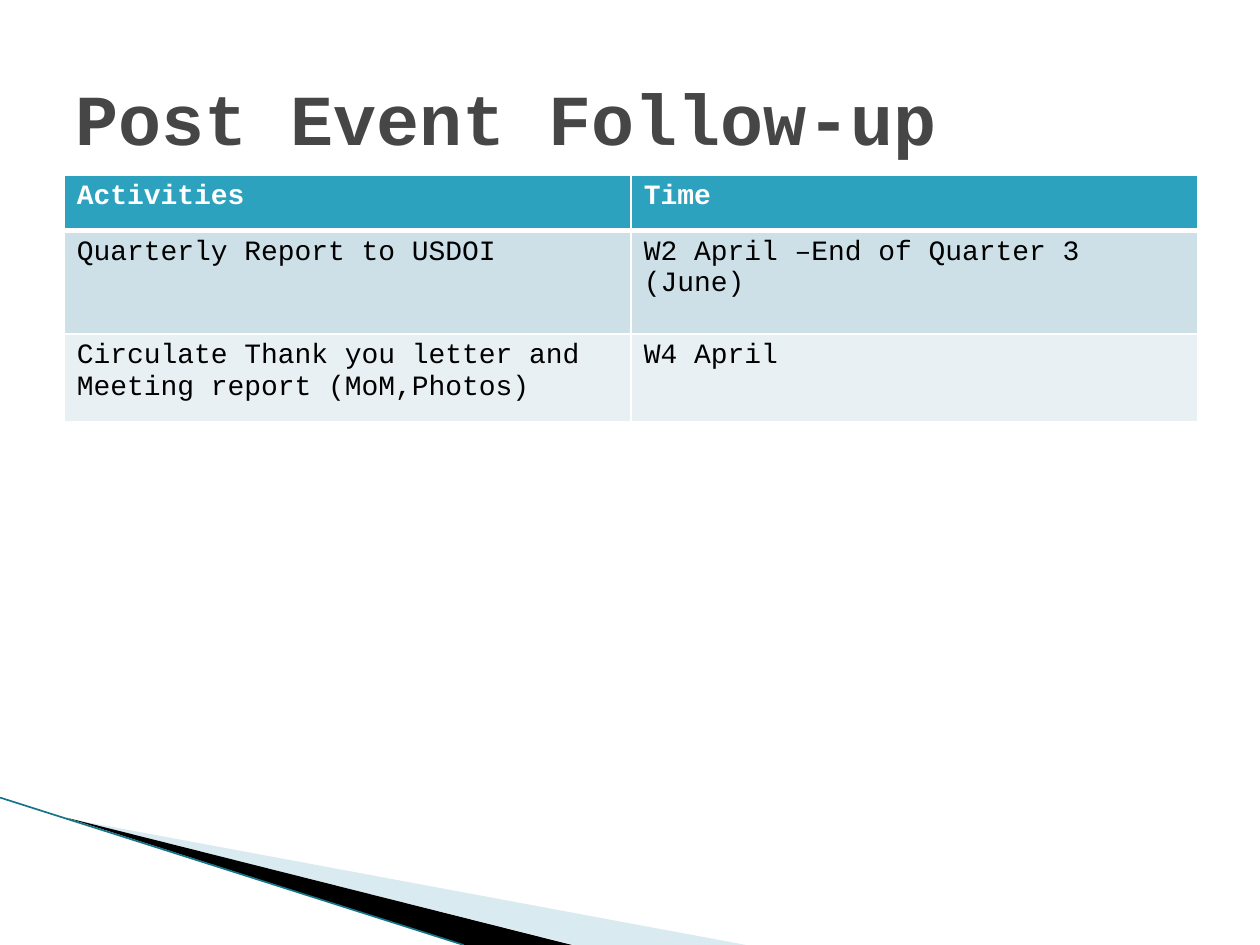
from lxml import etree
from pptx import Presentation
from pptx.dml.color import RGBColor
from pptx.enum.shapes import MSO_CONNECTOR
from pptx.enum.text import MSO_ANCHOR
from pptx.oxml import parse_xml
from pptx.oxml.ns import nsdecls, qn
from pptx.util import Inches, Pt

FONT = "Courier New"
WHITE = RGBColor(0xFF, 0xFF, 0xFF)
BLACK = RGBColor(0x00, 0x00, 0x00)
TITLE_GREY = RGBColor(0x46, 0x46, 0x46)
PALE_BLUE = RGBColor(0xA0, 0xCB, 0xDC)
EDGE_TEAL = RGBColor(0x16, 0x74, 0x8A)
HEADER_TEAL = RGBColor(0x2D, 0xA2, 0xBF)
BAND_DARK = RGBColor(0xCD, 0xE0, 0xE8)
BAND_LIGHT = RGBColor(0xE8, 0xF0, 0xF4)


def add_text(paragraph, text, size, color, bold):
    run = paragraph.add_run()
    run.text = text
    run.font.name = FONT
    run.font.size = Pt(size)
    run.font.bold = bold
    run.font.color.rgb = color


def set_borders(cell, bottom_width):
    """White 1 pt borders, with a bottom border of its own width in points."""
    widths = {"lnL": 1, "lnR": 1, "lnT": 1, "lnB": bottom_width}
    for position, (side, width) in enumerate(widths.items()):
        border = parse_xml(
            f'<a:{side} {nsdecls("a")} w="{Pt(width)}"><a:solidFill>'
            f'<a:srgbClr val="{WHITE}"/></a:solidFill></a:{side}>')
        cell._tc.get_or_add_tcPr().insert(position, border)


prs = Presentation()
prs.slide_width, prs.slide_height = Inches(10), Inches(7.5)
slide = prs.slides.add_slide(prs.slide_layouts[6])
shapes = slide.shapes

# Corner wedges
wedges = [
    ([(0.55, 6.5), (5.92, 7.5), (4.56, 7.5)], PALE_BLUE, 40),
    ([(0.53, 6.49), (4.54, 7.5), (3.68, 7.5)], BLACK, 100),
]
for corners, color, opacity in wedges:
    points = [(Inches(x), Inches(y)) for x, y in corners]
    builder = shapes.build_freeform(*points[0])
    builder.add_line_segments(points[1:], close=True)
    wedge = builder.convert_to_shape()
    wedge.shadow.inherit = False
    wedge.line.fill.background()
    wedge.fill.solid()
    wedge.fill.fore_color.rgb = color
    if opacity < 100:
        color_node = wedge._element.spPr.find(qn("a:solidFill"))[0]
        etree.SubElement(color_node, qn("a:alpha"), val=str(opacity * 1000))

edge = shapes.add_connector(MSO_CONNECTOR.STRAIGHT, Inches(0), Inches(6.33),
                            Inches(3.68), Inches(7.5))
edge.line.color.rgb = EDGE_TEAL
edge.line.width = Pt(0.95)
etree.SubElement(edge._element.spPr, qn("a:effectLst"))

# Title
title = shapes.add_textbox(Inches(0.5), Inches(0.3), Inches(9), Inches(1.25)).text_frame
title.word_wrap = True
title.vertical_anchor = MSO_ANCHOR.MIDDLE
add_text(title.paragraphs[0], "Post Event Follow-up", 41, TITLE_GREY, True)

# Follow-up schedule
schedule = [
    ("Activities", "Time"),
    ("Quarterly Report to USDOI", "W2 April –End of Quarter 3 (June)"),
    ("Circulate Thank you letter and Meeting report (MoM,Photos)", "W4 April"),
]
row_heights = [0.44, 0.82, 0.7]
row_fills = [HEADER_TEAL, BAND_DARK, BAND_LIGHT]
table = shapes.add_table(len(schedule), 2, Inches(0.51), Inches(1.39),
                         Inches(9), Inches(sum(row_heights))).table
for r, entries in enumerate(schedule):
    table.rows[r].height = Inches(row_heights[r])
    is_header = r == 0
    for c, entry in enumerate(entries):
        cell = table.cell(r, c)
        cell.fill.solid()
        cell.fill.fore_color.rgb = row_fills[r]
        set_borders(cell, 3 if is_header else 1)
        add_text(cell.text_frame.paragraphs[0], entry, 16,
                 WHITE if is_header else BLACK, is_header)

prs.save("out.pptx")
